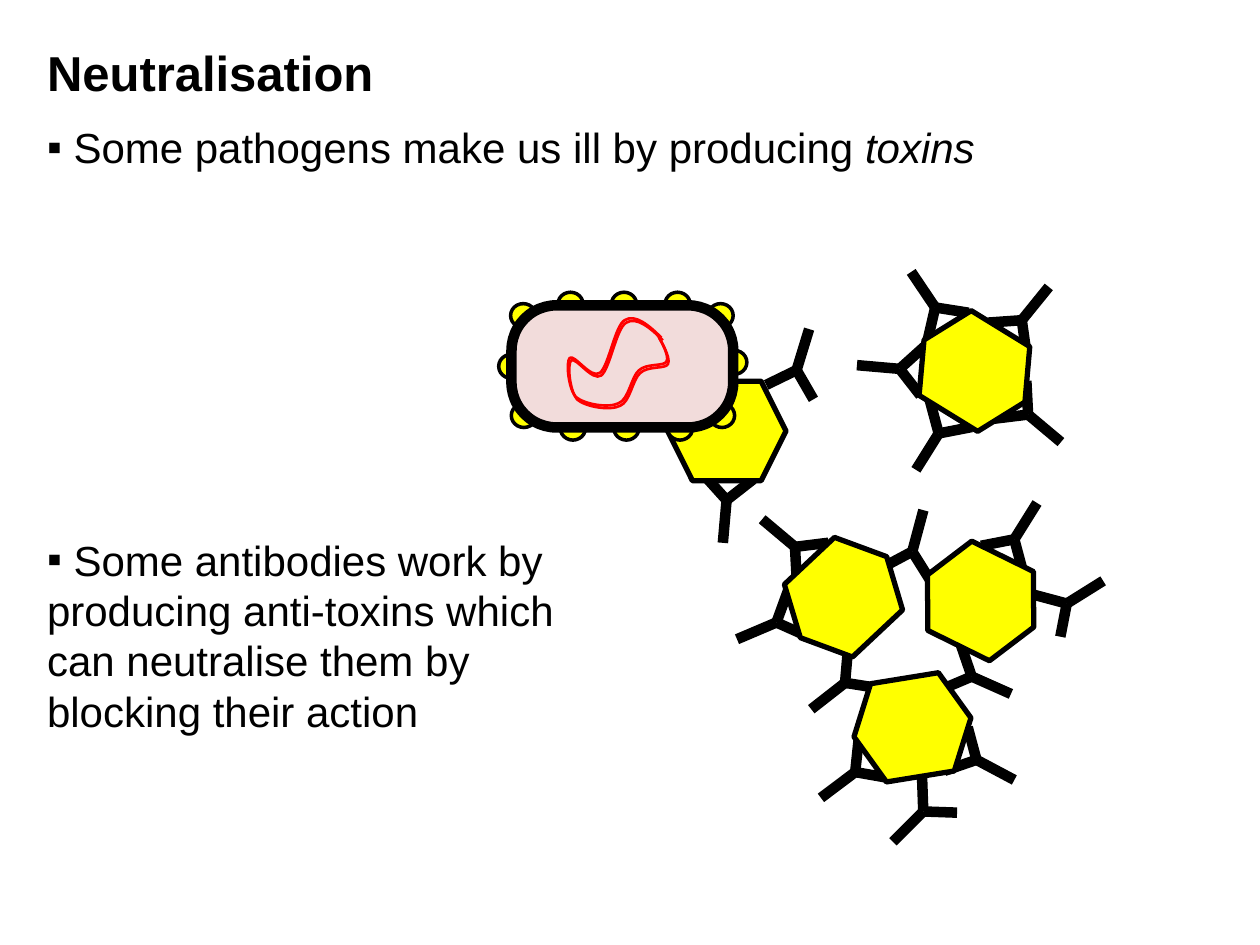
from dataclasses import dataclass
from math import cos, radians, sin

from lxml.etree import SubElement
from pptx import Presentation
from pptx.dml.color import RGBColor
from pptx.enum.shapes import MSO_CONNECTOR, MSO_SHAPE
from pptx.enum.text import MSO_AUTO_SIZE
from pptx.oxml.ns import qn
from pptx.util import Pt


@dataclass(frozen=True)
class Theme:
    font: str = "Arial"
    title_size: int = 28
    body_size: int = 24
    ink: RGBColor = RGBColor(0x00, 0x00, 0x00)
    toxin: RGBColor = RGBColor(0xFF, 0xFF, 0x00)
    cell: RGBColor = RGBColor(0xF2, 0xDC, 0xDB)
    dna: RGBColor = RGBColor(0xFF, 0x00, 0x00)


THEME = Theme()


def turn(x, y, degrees):
    """Rotate a point about the origin, clockwise on the slide."""
    a = radians(degrees)
    return x * cos(a) - y * sin(a), x * sin(a) + y * cos(a)


def curve_segments(shape):
    """Turn each run of three line segments into one cubic curve."""
    path = next(shape._element.iter(qn("a:path")))
    lines = path.findall(qn("a:lnTo"))
    for i in range(0, len(lines), 3):
        curve = SubElement(path, qn("a:cubicBezTo"))
        for line in lines[i:i + 3]:
            curve.append(line[0])
            path.remove(line)


def add_run(paragraph, text, *, size, bold=None, italic=None):
    run = paragraph.add_run()
    run.text = text
    font = run.font
    font.name, font.size = THEME.font, Pt(size)
    font.bold, font.italic = bold, italic
    font.color.rgb = THEME.ink


class Drawing:
    ARM, STEM, SPREAD = 19.3, 24.5, 133

    def __init__(self, slide, theme):
        self.slide, self.theme = slide, theme

    def group(self):
        return self.slide.shapes.add_group_shape().shapes

    def text(self, left, top, width, height, runs, size, bullet=None, wrap=True, bold=None):
        box = self.slide.shapes.add_textbox(Pt(left), Pt(top), Pt(width), Pt(height))
        frame = box.text_frame
        frame.word_wrap = wrap
        frame.auto_size = MSO_AUTO_SIZE.SHAPE_TO_FIT_TEXT
        paragraph = frame.paragraphs[0]
        if bullet:
            properties = paragraph._p.get_or_add_pPr()
            SubElement(properties, qn("a:buFont")).set("typeface", self.theme.font)
            SubElement(properties, qn("a:buChar")).set("char", bullet)
        for wording, italic in runs:
            add_run(paragraph, wording, size=size, bold=bold, italic=italic)

    def solid(self, kind, left, top, width, height, fill, weight, rotation=0, parent=None):
        shapes = self.slide.shapes if parent is None else parent
        shape = shapes.add_shape(kind, Pt(left), Pt(top), Pt(width), Pt(height))
        shape.shadow.inherit = False
        shape.fill.solid()
        shape.fill.fore_color.rgb = fill
        shape.line.color.rgb = self.theme.ink
        shape.line.width = Pt(weight)
        shape.rotation = rotation
        return shape

    def toxin(self, left, top, rotation=0):
        self.solid(MSO_SHAPE.HEXAGON, left, top, 67.7, 56.9, self.theme.toxin, 3, rotation)

    def line(self, start, end, parent):
        ends = [Pt(value) for value in (*start, *end)]
        line = parent.add_connector(MSO_CONNECTOR.STRAIGHT, *ends)
        line.line.color.rgb = self.theme.ink
        line.line.width = Pt(6)
        SubElement(line._element.spPr, qn("a:effectLst"))

    def antibody(self, x, y, angle):
        """Y shape: a stem at the given angle and two arms behind the hub."""
        parent = self.group()
        for length, offset in ((self.ARM, self.SPREAD), (self.ARM, -self.SPREAD), (self.STEM, 0)):
            dx, dy = turn(length, 0, angle + offset)
            self.line((x + dx, y + dy), (x, y), parent)

    def strand(self, points, center, rotation, parent):
        cx, cy = center
        upright = [turn(x - cx, y - cy, -rotation) for x, y in points]
        first, *rest = [(Pt(cx + x), Pt(cy + y)) for x, y in upright]
        builder = parent.build_freeform(*first)
        builder.add_line_segments(rest, close=False)
        strand = builder.convert_to_shape()
        curve_segments(strand)
        # Keep the turn about the given center
        dx = strand.left + strand.width / 2 - Pt(cx)
        dy = strand.top + strand.height / 2 - Pt(cy)
        turned_x, turned_y = turn(dx, dy, rotation)
        strand.left += round(turned_x - dx)
        strand.top += round(turned_y - dy)
        strand.rotation = rotation
        strand.shadow.inherit = False
        strand.fill.background()
        strand.line.color.rgb = self.theme.dna
        strand.line.width = Pt(1.5)

    def bacterium(self):
        parent = self.group()
        for left, top in SURFACE_TOXINS:
            self.solid(MSO_SHAPE.OVAL, left, top, 14.4, 13.7, self.theme.toxin, 2, parent=parent)
        wall = self.solid(MSO_SHAPE.ROUNDED_RECTANGLE, 292.3, 174.5, 126.7, 69.8,
                          self.theme.cell, 6, parent=parent)
        wall.adjustments[0] = 0.37
        for dx, dy in ((0, 0), (0.8, 1.5)):
            self.strand([(x + dx, y + dy) for x, y in DNA_CURVE],
                        (351.9 + dx, 208.4 + dy), 52.3, parent)


# Toxins on the bacterium: top row, bottom row, then corners and sides
SURFACE_TOXINS = (
    [(318.8 + 30.6 * i, 167) for i in range(3)]
    + [(320.2 + 30.6 * i, 237.8) for i in range(3)]
    + [(292.2, 230.6), (405.4, 230.6), (291.8, 173.5), (404.6, 173.5),
       (412.4, 200.2), (285, 202.5)]
)
# Start point, then two controls and an end for each curve
DNA_CURVE = [
    (378, 193),
    (370.8, 185.8), (362.9, 179.3), (357.1, 182.9),
    (351.4, 185.8), (347.8, 209.5), (342.7, 213.1),
    (337.7, 216.7), (328.3, 202.3), (325.6, 204.5),
    (323.3, 206.6), (324.7, 221.8), (329, 226.8),
    (334.1, 231.1), (347.8, 233.3), (353.5, 230.4),
    (359.3, 228.2), (360.7, 215.3), (365, 211.7),
    (369.4, 207.4), (379.4, 209.5), (380.9, 206.6),
    (383, 203), (375.8, 191.5), (375.8, 191.5),
]
# Hub x, hub y and stem angle
ANTIBODIES = [
    (579.6, 308.2, -58), (454.3, 312.5, -140), (521.3, 315.2, -75), (558, 434.2, 28),
    (583.9, 183, -51), (534.4, 175.7, -124), (587.5, 236.9, 40), (443.7, 355.7, 157),
    (455.2, 211.5, -73), (527.6, 463.7, 135), (514.1, 210.8, 185), (482.9, 390.2, 142),
    (609.6, 344.9, -32), (488.7, 441.2, 143), (536.4, 247.7, 122), (555.3, 386.6, 24),
]
# Left, top and rotation
BLOCKED_TOXINS = [(448.2, 312.8, 316.8), (523, 183.6, 31.6),
                  (526.5, 315, 26.2), (487.6, 387.2, 350.8)]


def main():
    deck = Presentation()
    deck.slide_width, deck.slide_height = Pt(720), Pt(540)
    drawing = Drawing(deck.slides.add_slide(deck.slide_layouts[6]), THEME)

    # Bacterium releasing a toxin
    drawing.antibody(415.2, 285.8, 95)
    drawing.toxin(381.5, 217.8)
    drawing.bacterium()

    # Antibodies surrounding the free toxins
    for antibody in ANTIBODIES:
        drawing.antibody(*antibody)
    for toxin in BLOCKED_TOXINS:
        drawing.toxin(*toxin)

    # Title and explanation
    drawing.text(19.8, 20.9, 203, 41, [("Neutralisation", None)],
                 THEME.title_size, wrap=False, bold=True)
    drawing.text(19.8, 66.2, 680.4, 36,
                 [(" Some pathogens make us ill by producing ", None), ("toxins", True)],
                 THEME.body_size, bullet="▪")
    drawing.text(19.8, 301.7, 323.3, 123.8,
                 [(" Some antibodies work by producing anti-toxins which can "
                   "neutralise them by blocking their action", None)],
                 THEME.body_size, bullet="▪")

    deck.save("out.pptx")


if __name__ == "__main__":
    main()
